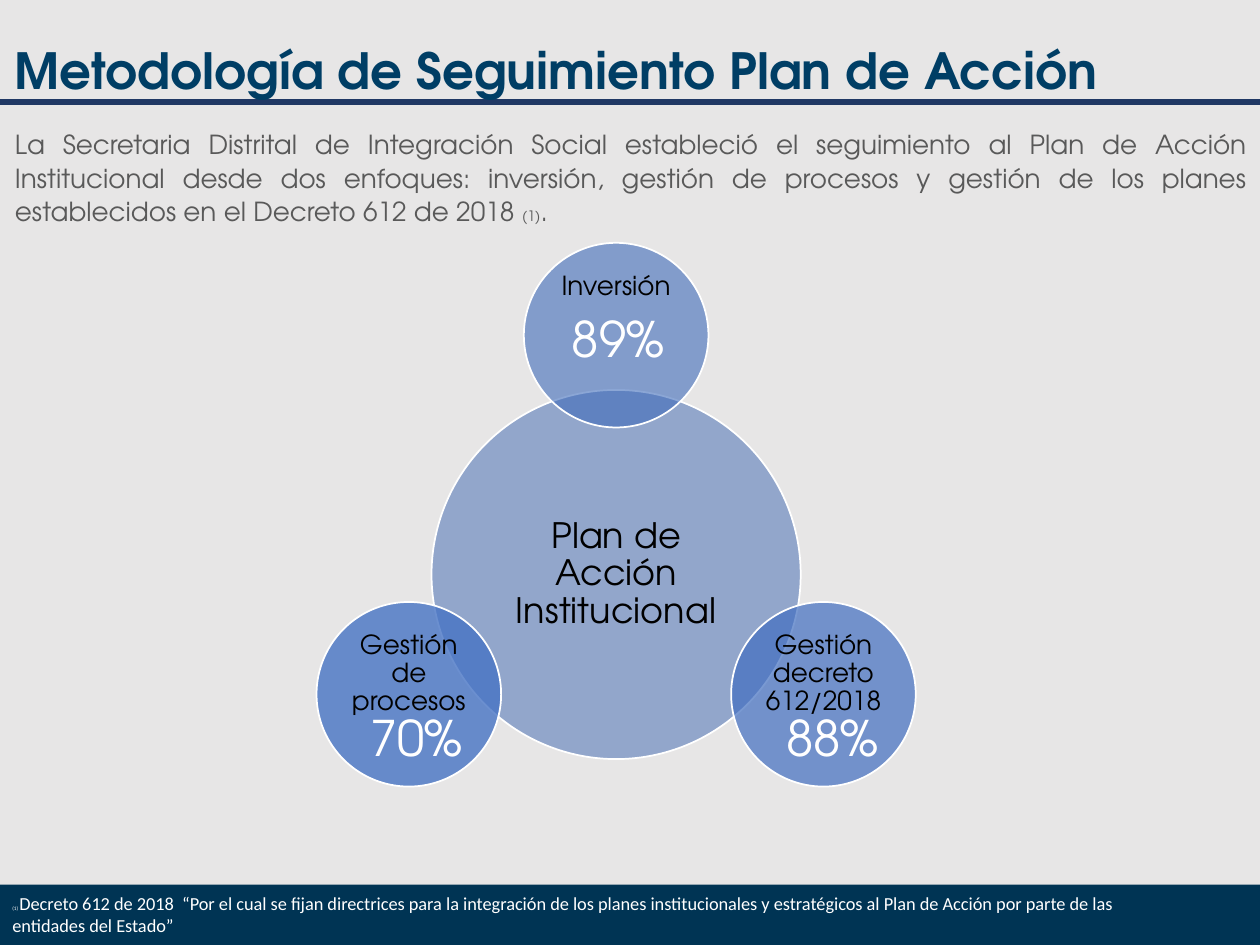
import math
from dataclasses import dataclass

from lxml import etree
from pptx import Presentation
from pptx import util as u
from pptx.dml.color import RGBColor
from pptx.enum import shapes, text
from pptx.oxml import ns


@dataclass(frozen=True)
class Theme:
    font: str = "TeX Gyre Adventor"
    note_font: str = "Calibri"
    background: str = "E7E6E6"
    footer: str = "003454"
    rule: str = "203864"
    title: str = "003E65"
    body: str = "595959"
    black: str = "000000"
    white: str = "FFFFFF"
    title_size: float = 28.5
    figure_size: float = 28
    hub_size: float = 20
    body_size: float = 15
    reference_size: float = 8.2
    note_size: float = 10.5
    note_mark_size: float = 3


THEME = Theme()
ALIGN = text.PP_ALIGN
ANCHOR = text.MSO_ANCHOR

# Diagram geometry in inches
HUB_X, HUB_Y, HUB_SIZE = 4.89, 4.56, 2.93
SATELLITE_SIZE, ORBIT = HUB_SIZE / 2, 1.9
FIGURE_HEIGHT = 0.57

# label, angle, fill, opacity, percentage, figure left, figure top, figure width
SATELLITES = [
    ("Inversión", -90, "3F6BBA", 60, "89%", 4.24, 2.4, 1.33),
    ("Gestión decreto 612/2018", 30, "416EC0", 70, "88%", 6.05, 5.57, 1.11),
    ("Gestión de procesos", 150, "4673C4", 80, "70%", 2.75, 5.57, 1.11),
]


def rgb(value):
    return RGBColor.from_string(value)


def add_text(page, runs, left, top, width, height, *, color, font=THEME.font,
             bold=False, align=ALIGN.LEFT, anchor=ANCHOR.TOP, spacing=None,
             inset=None):
    """Add one paragraph made of (wording, size) runs."""
    box = page.shapes.add_textbox(*map(u.Inches, (left, top, width, height)))
    frame = box.text_frame
    frame.word_wrap = True
    frame.vertical_anchor = anchor
    if inset is not None:
        frame.margin_left = frame.margin_right = u.Inches(inset)
        frame.margin_top = frame.margin_bottom = u.Inches(inset)
    para = frame.paragraphs[0]
    para.alignment = align
    if spacing:
        para.line_spacing = spacing
    for wording, size in runs:
        span = para.add_run()
        span.text = wording
        span.font.size = u.Pt(size)
        span.font.name = font
        span.font.bold = bold
        span.font.color.rgb = rgb(color)


def add_filled(page, kind, left, top, width, height, fill):
    shape = page.shapes.add_shape(kind, *map(u.Inches, (left, top, width, height)))
    shape.shadow.inherit = False
    shape.fill.solid()
    shape.fill.fore_color.rgb = rgb(fill)
    shape.line.fill.background()
    return shape


def add_rule(page, y):
    line = page.shapes.add_connector(
        shapes.MSO_CONNECTOR.STRAIGHT, 0, u.Inches(y), u.Inches(10), u.Inches(y))
    line.line.color.rgb = rgb(THEME.rule)
    line.line.width = u.Pt(3)
    etree.SubElement(line._element.spPr, ns.qn("a:effectLst"))


def add_circle(page, x, y, size, fill, opacity, label, label_size, inset, anchor):
    """Add a translucent circle and its label, in the inscribed square."""
    circle = add_filled(page, shapes.MSO_SHAPE.OVAL,
                        x - size / 2, y - size / 2, size, size, fill)
    circle.line.color.rgb = rgb(THEME.white)
    circle.line.width = u.Pt(1)
    color = circle._element.spPr.find(ns.qn("a:solidFill"))[0]
    etree.SubElement(color, ns.qn("a:alpha"), val=str(opacity * 1000))
    side = size / math.sqrt(2)
    add_text(page, [(label, label_size)], x - side / 2, y - side / 2, side, side,
             color=THEME.black, align=ALIGN.CENTER, anchor=anchor, spacing=0.9,
             inset=inset)


def add_diagram(page):
    add_circle(page, HUB_X, HUB_Y, HUB_SIZE, "3E67B2", 50,
               "Plan de Acción Institucional", THEME.hub_size, 0.03, ANCHOR.MIDDLE)
    for label, angle, fill, opacity, *_ in SATELLITES:
        turn = math.radians(angle)
        add_circle(page, HUB_X + ORBIT * math.cos(turn),
                   HUB_Y + ORBIT * math.sin(turn), SATELLITE_SIZE, fill, opacity,
                   label, THEME.body_size, 0.02, ANCHOR.TOP)
    for *_, figure, left, top, width in SATELLITES:
        add_text(page, [(figure, THEME.figure_size)], left, top, width,
                 FIGURE_HEIGHT, color=THEME.white, align=ALIGN.CENTER)


def main():
    deck = Presentation()
    deck.slide_width, deck.slide_height = u.Inches(10), u.Inches(7.5)
    page = deck.slides.add_slide(deck.slide_layouts[6])
    page.background.fill.solid()
    page.background.fill.fore_color.rgb = rgb(THEME.background)

    # Footer band and title rule
    add_filled(page, shapes.MSO_SHAPE.RECTANGLE, 0, 7.02, 10, 0.48, THEME.footer)
    add_rule(page, 0.81)

    # Title and introduction
    add_text(page, [("Metodología de Seguimiento Plan de Acción", THEME.title_size)],
             0.02, 0.3, 8.98, 0.51, color=THEME.title, bold=True,
             anchor=ANCHOR.MIDDLE)
    add_text(page, [
        ("La Secretaria Distrital de Integración Social estableció el seguimiento "
         "al Plan de Acción Institucional desde dos enfoques: inversión, gestión de "
         "procesos y gestión de los planes establecidos en el Decreto 612 de 2018 ",
         THEME.body_size),
        ("(1)", THEME.reference_size),
        (".", THEME.body_size),
    ], 0.02, 0.95, 9.98, 0.89, color=THEME.body, align=ALIGN.JUSTIFY, spacing=1.07)

    # Hub, satellites and their percentages
    add_diagram(page)

    # Footnote
    add_text(page, [
        ("(1) ", THEME.note_mark_size),
        ("Decreto 612 de 2018  “Por el cual se fijan directrices para la integración "
         "de los planes institucionales y estratégicos al Plan de Acción por parte "
         "de las entidades del Estado”", THEME.note_size),
    ], 0, 7.03, 9.42, 0.47, color=THEME.white, font=THEME.note_font)

    deck.save("out.pptx")


if __name__ == "__main__":
    main()
